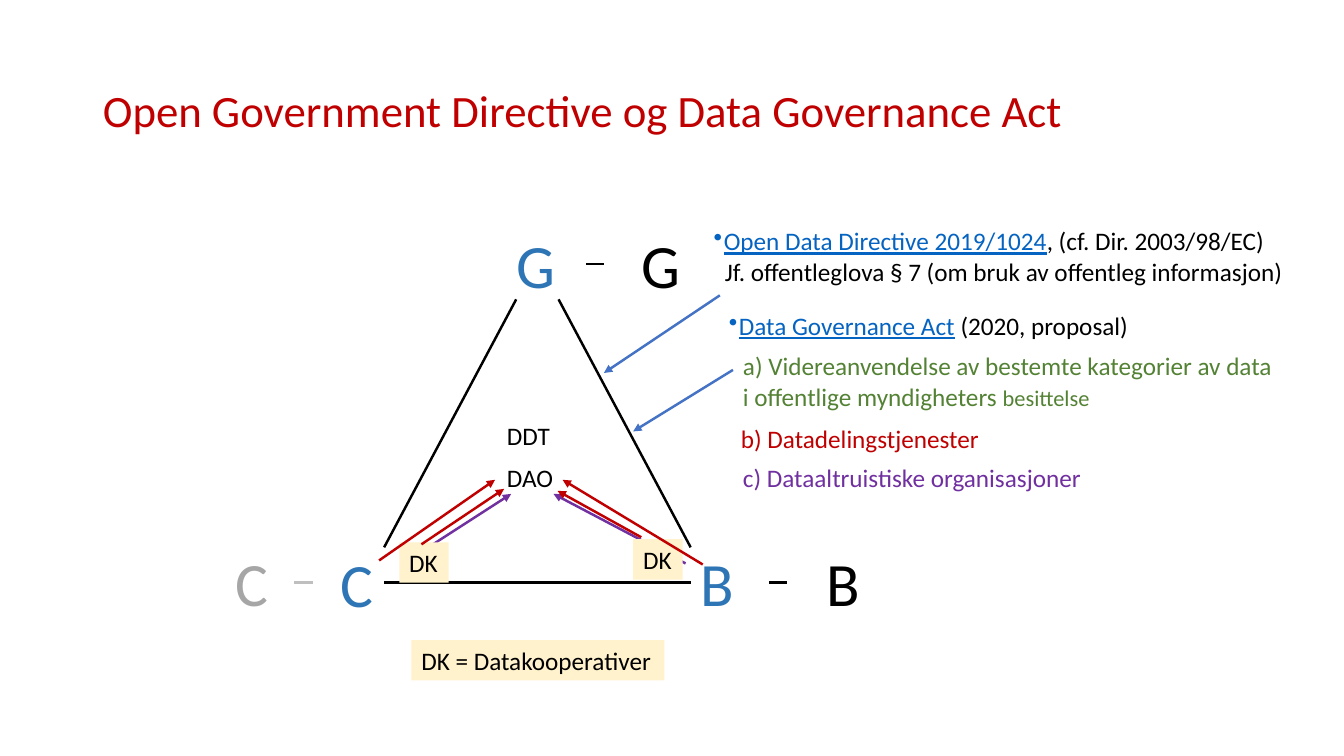
from pptx import Presentation
from pptx.dml.color import RGBColor
from pptx.enum.shapes import MSO_CONNECTOR, MSO_SHAPE
from pptx.enum.text import MSO_ANCHOR, MSO_AUTO_SIZE, PP_ALIGN
from pptx.oxml.ns import qn
from pptx.util import Inches, Pt
from lxml import etree

FONT = "Calibri"
BLACK = RGBColor(0x00, 0x00, 0x00)
GREY = RGBColor(0xA6, 0xA6, 0xA6)
LIGHT_GREY = RGBColor(0xBF, 0xBF, 0xBF)
BLUE = RGBColor(0x2E, 0x75, 0xB6)
ARROW_BLUE = RGBColor(0x44, 0x72, 0xC4)
LINK_BLUE = RGBColor(0x05, 0x63, 0xC1)
RED = RGBColor(0xC0, 0x00, 0x00)
GREEN = RGBColor(0x54, 0x82, 0x35)
PURPLE = RGBColor(0x70, 0x30, 0xA0)
CREAM = RGBColor(0xFF, 0xF2, 0xCC)

STRAIGHT = MSO_CONNECTOR.STRAIGHT
RECTANGLE = MSO_SHAPE.RECTANGLE
LEFT = PP_ALIGN.LEFT
TOP = MSO_ANCHOR.TOP
MIDDLE = MSO_ANCHOR.MIDDLE
FIT_SHAPE = MSO_AUTO_SIZE.SHAPE_TO_FIT_TEXT
NO_FIT = MSO_AUTO_SIZE.NONE


def add_run(p, text, size=18, color=BLACK, underline=None):
    r = p.add_run()
    r.text = text
    r.font.name = FONT
    r.font.size = Pt(size)
    r.font.color.rgb = color
    r.font.underline = underline


def set_indent(p, left, first=0.0, bullet=None):
    pPr = p._p.get_or_add_pPr()
    pPr.set("marL", str(Inches(left)))
    pPr.set("indent", str(Inches(first)))
    if bullet:
        etree.SubElement(pPr, qn("a:buChar"), char=bullet)


def add_box(s, left, top, width, height, fill=None, wrap=False):
    """Add an empty text box, or a filled rectangle, and return its text frame."""
    place = [Inches(v) for v in (left, top, width, height)]
    if fill is None:
        sp = s.shapes.add_textbox(*place)
    else:
        sp = s.shapes.add_shape(RECTANGLE, *place)
        sp.shadow.inherit = False
        sp.fill.solid()
        sp.fill.fore_color.rgb = fill
        sp.line.fill.background()
    tf = sp.text_frame
    tf.word_wrap = wrap
    tf.auto_size = FIT_SHAPE
    tf.vertical_anchor = TOP
    tf.paragraphs[0].alignment = LEFT
    return tf


def add_label(s, text, left, top, width, height=0.4, fill=None, **fmt):
    tf = add_box(s, left, top, width, height, fill)
    add_run(tf.paragraphs[0], text, **fmt)
    return tf


def add_line(s, start, end, color=BLACK, arrow=False):
    points = [Inches(v) for v in (*start, *end)]
    line = s.shapes.add_connector(STRAIGHT, *points)
    line.line.color.rgb = color
    line.line.width = Pt(1.75)
    if arrow:
        etree.SubElement(line.line._get_or_add_ln(), qn("a:tailEnd"), type="triangle")
    etree.SubElement(line._element.spPr, qn("a:effectLst"))


def add_title(s, text):
    title = s.shapes.title
    title.left, title.top = Inches(0.92), Inches(0.4)
    title.width, title.height = Inches(11.5), Inches(1.45)
    tf = title.text_frame
    tf.vertical_anchor = MIDDLE
    tf.auto_size = NO_FIT
    p = tf.paragraphs[0]
    p.alignment = LEFT
    p.line_spacing = 0.9
    add_run(p, text, size=32, color=RED)


def add_triangle(s):
    """Add the G-B-C triangle with its outer letters and dashes."""
    for text, left, top, width, color in (
        ("G", 5.02, 2.2, 0.59, BLUE),
        ("G", 6.26, 2.2, 0.59, BLACK),
        ("B", 6.85, 5.36, 0.54, BLUE),
        ("B", 8.1, 5.36, 0.54, BLACK),
        ("C", 3.28, 5.37, 0.53, BLUE),
        ("C", 2.24, 5.36, 0.53, GREY),
    ):
        add_label(s, text, left, top, width, 0.84, size=44, color=color)
    for left, y, color in ((5.81, 2.62, BLACK), (7.63, 5.78, BLACK), (2.92, 5.78, LIGHT_GREY)):
        add_line(s, (left, y), (left + 0.18, y), color)
    add_line(s, (3.81, 5.43), (5.12, 2.97))
    add_line(s, (6.85, 5.43), (5.54, 2.97))
    add_line(s, (3.81, 5.78), (6.85, 5.78))


def add_directives(s):
    tf = add_box(s, 6.98, 2.19, 6.01, 0.77, wrap=True)
    p = tf.paragraphs[0]
    set_indent(p, 0.1, -0.1, "•")
    add_run(p, "Open Data Directive 2019/1024", color=LINK_BLUE, underline=True)
    add_run(p, ", (cf. Dir. 2003/98/EC)")
    p = tf.add_paragraph()
    set_indent(p, 0.11)
    add_run(p, "Jf. offentleglova § 7 (om bruk av offentleg informasjon)")

    p = add_box(s, 7.13, 3.03, 4.45, 0.4, wrap=True).paragraphs[0]
    set_indent(p, 0.1, -0.1, "•")
    add_run(p, "Data Governance Act", color=LINK_BLUE, underline=True)
    add_run(p, " (2020, proposal)")

    tf = add_label(s, "a) Videreanvendelse av bestemte kategorier av data",
                   7.27, 3.43, 5.51, 0.71, color=GREEN)
    p = tf.add_paragraph()
    add_run(p, "i offentlige myndigheters ", color=GREEN)
    add_run(p, "besittelse", size=16, color=GREEN)
    add_label(s, "b) Datadelingstjenester", 7.25, 4.15, 2.59, color=RED)
    add_label(s, "c) Dataaltruistiske organisasjoner", 7.27, 4.54, 3.59, color=PURPLE)

    add_line(s, (7.14, 2.93), (5.99, 3.7), ARROW_BLUE, arrow=True)
    add_line(s, (7.27, 3.67), (6.28, 4.28), ARROW_BLUE, arrow=True)


def add_data_sharing(s):
    """Add the DDT and DAO labels, the DK boxes and the arrows between them."""
    add_label(s, "DDT", 4.93, 4.12, 0.63)
    add_label(s, "DAO", 4.93, 4.54, 0.66)
    for start, end in (((6.8, 5.59), (5.49, 4.9)), ((4.0, 5.59), (5.07, 4.9))):
        add_line(s, start, end, PURPLE, arrow=True)
    add_label(s, "DK", 3.96, 5.38, 0.49, fill=CREAM)
    add_label(s, "DK", 6.28, 5.35, 0.49, fill=CREAM)
    add_label(s, "DK = Datakooperativer", 4.08, 6.35, 2.51, fill=CREAM)
    for start, end in (
        ((4.18, 5.4), (5.0, 4.85)),
        ((3.76, 5.56), (4.91, 4.76)),
        ((6.97, 5.6), (5.58, 4.76)),
        ((6.36, 5.33), (5.53, 4.87)),
    ):
        add_line(s, start, end, RED, arrow=True)


def main():
    prs = Presentation()
    prs.slide_width, prs.slide_height = Inches(13.33), Inches(7.5)
    s = prs.slides.add_slide(prs.slide_layouts[5])
    add_title(s, "Open Government Directive og Data Governance Act")
    add_triangle(s)
    add_directives(s)
    add_data_sharing(s)
    prs.save("out.pptx")


if __name__ == "__main__":
    main()
